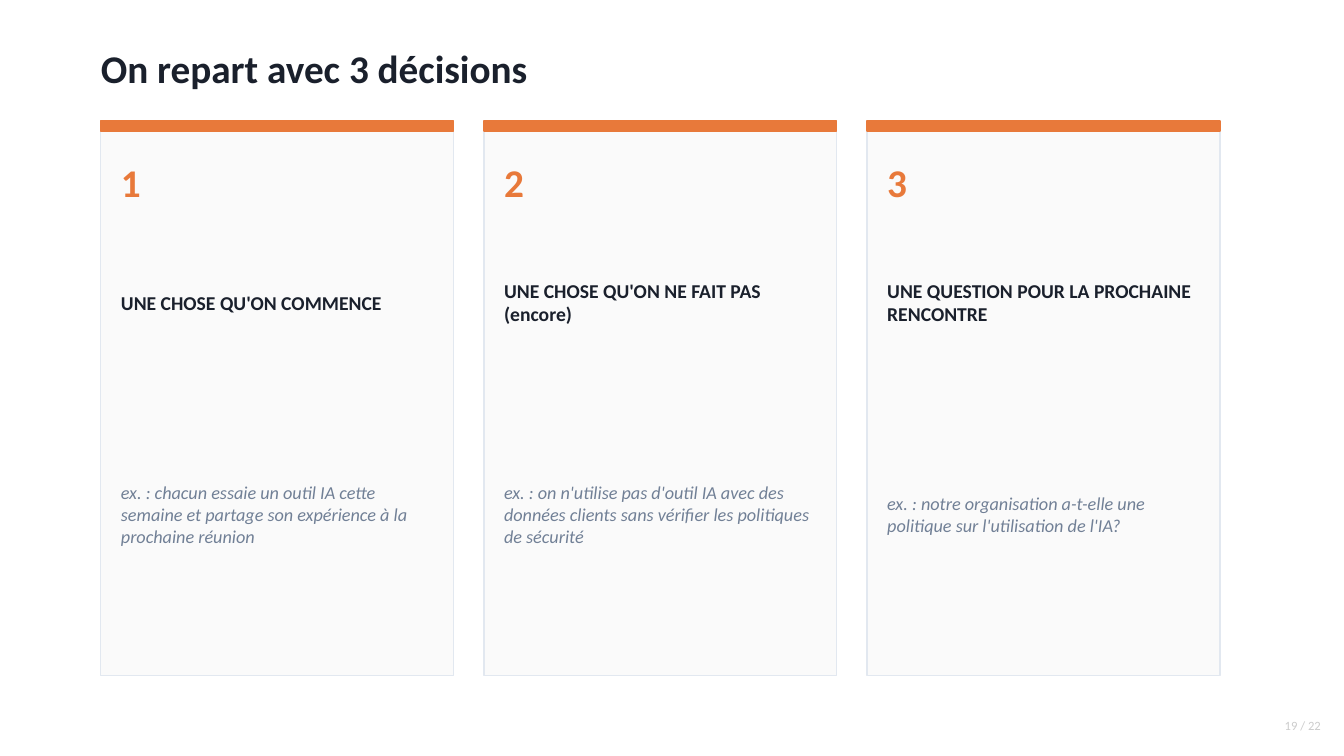
from pptx import Presentation
from pptx.dml.color import RGBColor
from pptx.enum.shapes import MSO_SHAPE
from pptx.enum.text import MSO_ANCHOR, PP_ALIGN
from pptx.util import Inches, Pt

RECT = MSO_SHAPE.RECTANGLE
MIDDLE = MSO_ANCHOR.MIDDLE
LEFT, RIGHT = PP_ALIGN.LEFT, PP_ALIGN.RIGHT

HUES = {"ink": "1A202C", "card": "FAFAFA", "edge": "E2E8F0",
        "accent": "E8793A", "muted": "718096", "page": "CCCCCC"}

# Font formats by role
FONTS = {
    "title": ("ink", {"size": Pt(28), "bold": True}),
    "number": ("accent", {"size": Pt(28), "bold": True}),
    "head": ("ink", {"size": Pt(14), "bold": True}),
    "hint": ("muted", {"size": Pt(13), "italic": True}),
    "page": ("page", {"size": Pt(9)}),
}

# Card columns
START, TOP, WIDTH, GAP, PAD = 1, 1.2, 3.5, 0.3, 0.2
INNER = WIDTH - 2 * PAD

CARDS = [
    ("UNE CHOSE QU'ON COMMENCE",
     "ex. : chacun essaie un outil IA cette semaine et partage son "
     "expérience à la prochaine réunion"),
    ("UNE CHOSE QU'ON NE FAIT PAS (encore)",
     "ex. : on n'utilise pas d'outil IA avec des données clients sans "
     "vérifier les politiques de sécurité"),
    ("UNE QUESTION POUR LA PROCHAINE RENCONTRE",
     "ex. : notre organisation a-t-elle une politique sur l'utilisation "
     "de l'IA?"),
]

deck = Presentation()
deck.slide_width, deck.slide_height = Inches(13.33), Inches(7.5)
slide = deck.slides.add_slide(deck.slide_layouts[5])
shapes = slide.shapes


def write(box, text, role, align=LEFT):
    frame = box.text_frame
    frame.word_wrap = True
    frame.vertical_anchor = MIDDLE
    for side in ("left", "top", "right", "bottom"):
        setattr(frame, "margin_" + side, 0)
    frame.text = text
    para = frame.paragraphs[0]
    para.alignment = align
    hue, look = FONTS[role]
    font = para.runs[0].font
    font.name = "Calibri"
    font.color.rgb = RGBColor.from_string(HUES[hue])
    for key, value in look.items():
        setattr(font, key, value)


def place(x, y, w, h):
    return [Inches(n) for n in (x, y, w, h)]


# Title
title = shapes.title
title.left, title.top, title.width, title.height = place(START, 0.35, 11, 0.65)
write(title, "On repart avec 3 décisions", "title")

# Three decision cards
for i, (head, hint) in enumerate(CARDS):
    x = START + i * (WIDTH + GAP)
    for high, fill, line in ((5.5, "card", "edge"), (0.1, "accent", "accent")):
        panel = shapes.add_shape(RECT, *place(x, TOP, WIDTH, high))
        panel.shadow.inherit = False
        panel.fill.solid()
        panel.fill.fore_color.rgb = RGBColor.from_string(HUES[fill])
        panel.line.color.rgb = RGBColor.from_string(HUES[line])
        panel.line.width = Pt(1)
    for text, role, y, w, h in ((str(i + 1), "number", 1.45, 0.6, 0.7),
                                (head, "head", 2.35, INNER, 1.3),
                                (hint, "hint", 3.85, INNER, 2.5)):
        write(shapes.add_textbox(*place(x + PAD, y, w, h)), text, role)

# Page number
write(shapes.add_textbox(*place(12.1, 7.05, 1, 0.3)), "19 / 22", "page", RIGHT)

deck.save("out.pptx")
